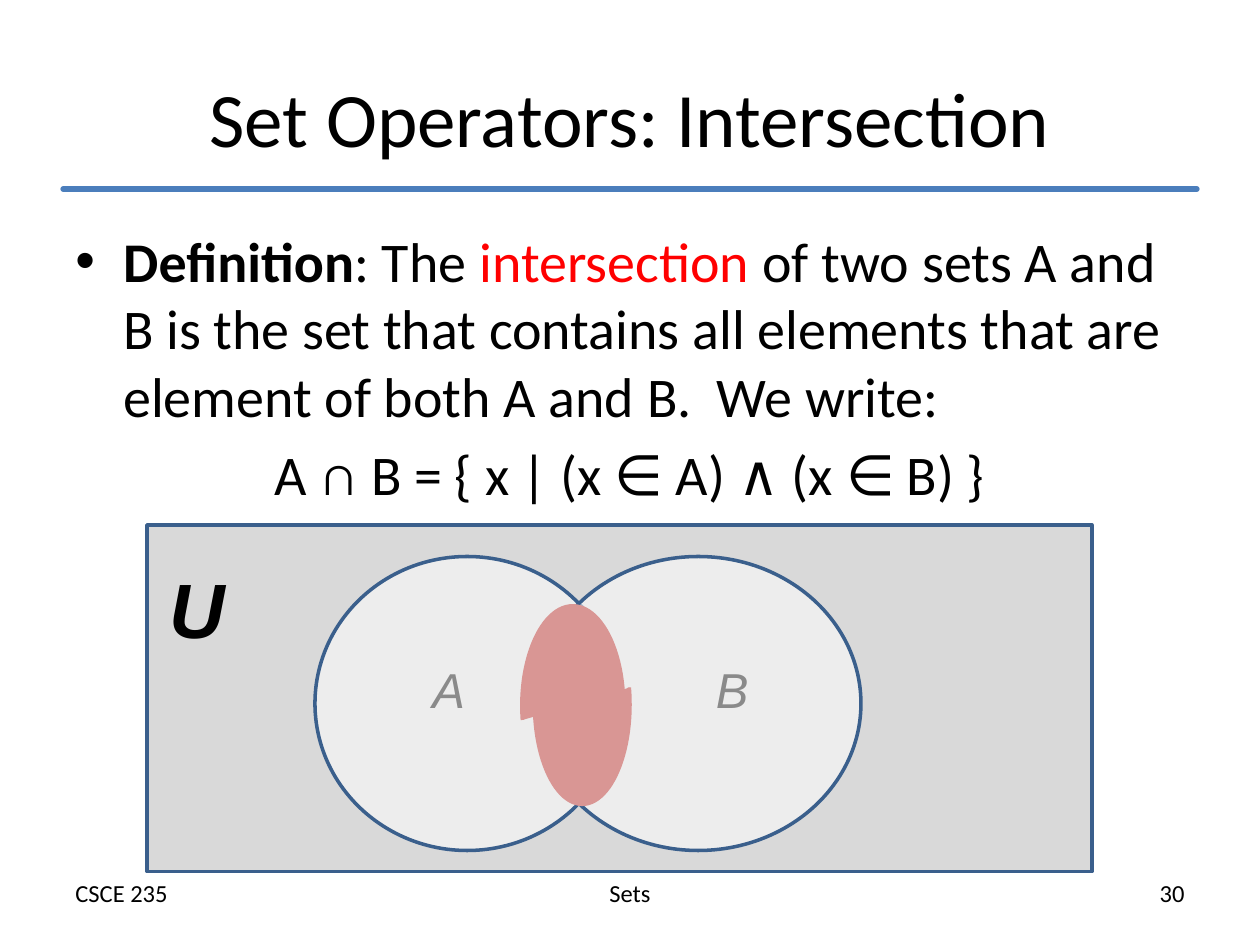
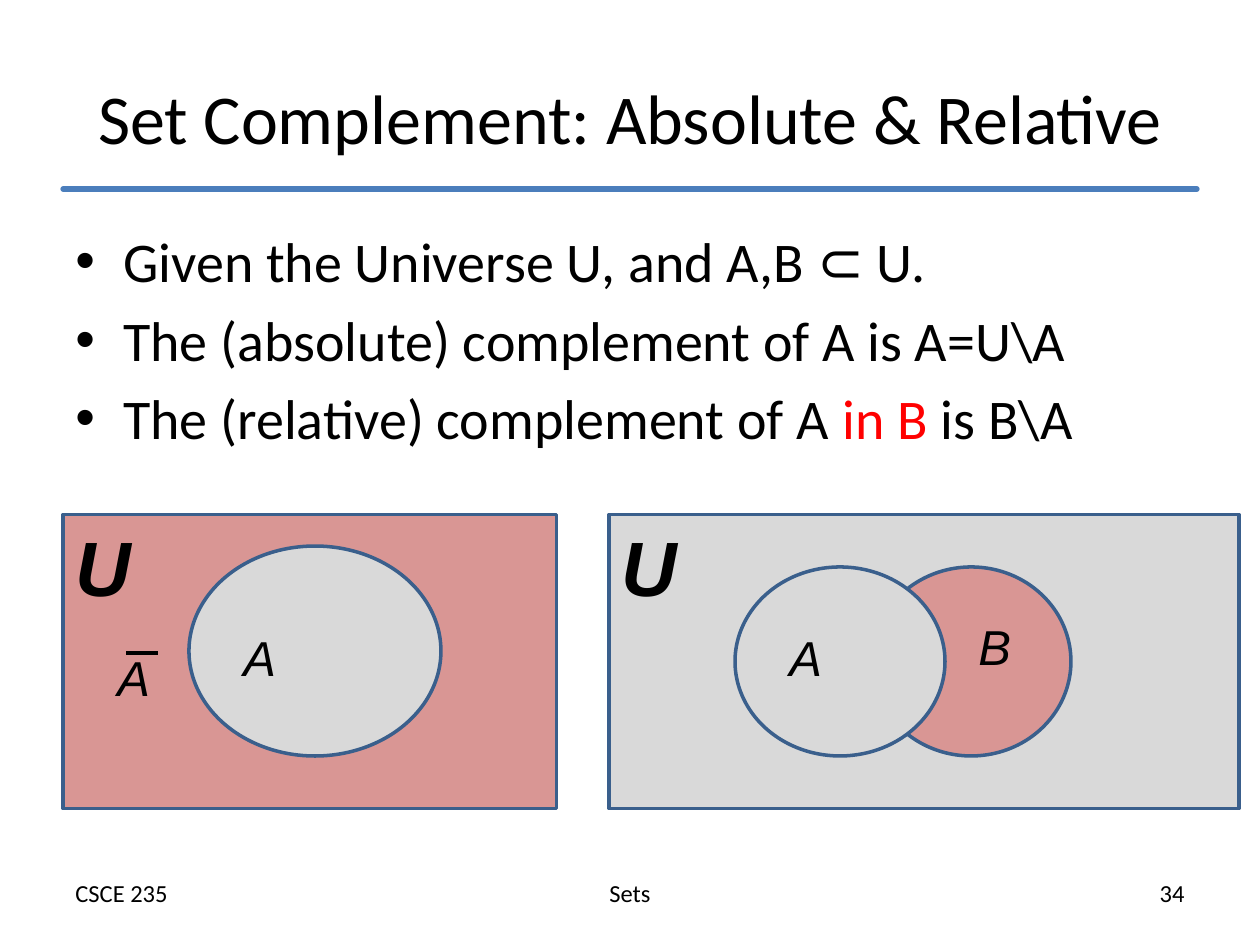
from dataclasses import dataclass
from typing import NamedTuple

from lxml import etree
from pptx import Presentation
from pptx import util as u
from pptx.dml.color import RGBColor
from pptx.enum import shapes, text
from pptx.oxml import ns

# Grid: 12 cells to the inch, so a slide is 120 columns by 90 rows
COLS, ROWS = 120, 90
CELL = u.Inches(1 / 12)
KIND = shapes.MSO_SHAPE
LEFT, MID, RIGHT = (text.PP_ALIGN.LEFT, text.PP_ALIGN.CENTER,
                    text.PP_ALIGN.RIGHT)


@dataclass(frozen=True)
class Theme:
    ink: str = "000000"
    paper: str = "FFFFFF"
    key: str = "FF0000"
    rule: str = "4B7EBC"
    edge: str = "3A5F8C"
    gray: str = "D9D9D9"
    rose: str = "D99694"
    font: str = "Calibri"
    math: str = "Arial"
    title: float = 44
    body: float = 32
    foot: float = 14
    world: float = 44
    label: float = 28
    hang: float = 0.38
    gap: float = 6.4


T = Theme()


class Box(NamedTuple):
    col: float
    row: float
    wide: float
    high: float


class Run(NamedTuple):
    words: str
    color: str = T.ink
    bold: bool = False


class Para(NamedTuple):
    runs: list[Run]
    align: text.PP_ALIGN = LEFT
    bullet: bool = True


class Area(NamedTuple):
    """A filled set, universe or part of a set."""
    box: Box
    fill: str
    kind: KIND = KIND.OVAL
    edge: str = T.edge
    alpha: int = 100
    turn: int = 0
    arc: tuple[float, ...] = ()


class Label(NamedTuple):
    col: float
    row: float
    name: str


class Bar(NamedTuple):
    col: float
    row: float
    end: float
    color: str
    width: float
    round: bool = False


class Page(NamedTuple):
    title: str
    size: float
    number: int
    body: list[Para]
    venn: list[Area | Label | Bar]


def cells(*spans: float) -> list[int]:
    return [round(span * CELL) for span in spans]


def sub(node, tag: str, **attrs: str):
    return etree.SubElement(node, ns.qn(tag), **attrs)


# Text
def write(slide, words: str | list[Para], box: Box, *, size: float,
          font: str = T.font, bold: bool = False, slant: bool = False,
          align: text.PP_ALIGN = LEFT, middle: bool = False,
          hang: float = 0, gap: float = 0) -> None:
    frame = slide.shapes.add_textbox(*cells(*box)).text_frame
    frame.word_wrap = True
    if middle:
        frame.vertical_anchor = text.MSO_ANCHOR.MIDDLE
    if isinstance(words, str):
        words = [Para([Run(words)], align, False)]
    for i, item in enumerate(words):
        para = frame.add_paragraph() if i else frame.paragraphs[0]
        para.alignment = item.align
        para.space_before = u.Pt(gap)
        props = para._p.get_or_add_pPr()
        if hang:
            props.set("marL", str(u.Inches(hang)))
            props.set("indent", str(-u.Inches(hang)))
        if item.bullet:
            sub(props, "a:buFont", typeface=T.math)
            sub(props, "a:buChar", char="•")
        for piece in item.runs:
            run = para.add_run()
            run.text = piece.words
            run.font.name, run.font.size = font, u.Pt(size)
            run.font.bold, run.font.italic = bold or piece.bold, slant
            run.font.color.rgb = RGBColor.from_string(piece.color)


# Diagram pieces
def fill_area(slide, area: Area) -> None:
    shape = slide.shapes.add_shape(area.kind, *cells(*area.box))
    shape.shadow.inherit = False
    shape.rotation = area.turn
    for i, angle in enumerate(area.arc):
        shape.adjustments[i] = angle * 0.6  # 60000 units to a degree
    shape.fill.solid()
    shape.fill.fore_color.rgb = RGBColor.from_string(area.fill)
    if area.alpha < 100:
        color = shape._element.spPr.find(".//" + ns.qn("a:srgbClr"))
        sub(color, "a:alpha", val=str(area.alpha * 1000))
    shape.line.color.rgb = RGBColor.from_string(area.edge)
    shape.line.width = u.Pt(2)


def draw_bar(slide, bar: Bar) -> None:
    line = slide.shapes.add_connector(
        shapes.MSO_CONNECTOR.STRAIGHT,
        *cells(bar.col, bar.row, bar.end, bar.row))
    line.line.color.rgb = RGBColor.from_string(bar.color)
    line.line.width = u.Pt(bar.width)
    props = line._element.spPr
    if bar.round:
        props.find(ns.qn("a:ln")).set("cap", "rnd")
    sub(props, "a:effectLst")


def name_set(slide, label: Label) -> None:
    world = label.name == "U"
    wide, high = (7, 10.1) if world else (5, 6.8)
    write(slide, label.name, Box(label.col, label.row, wide, high),
          size=T.world if world else T.label, font=T.math,
          bold=world, slant=True)


# Shared frame of a slide
def draw_page(deck, page: Page) -> None:
    slide = deck.slides.add_slide(deck.slide_layouts[6])
    feet = (("CSCE 235", LEFT), ("Sets", MID), (str(page.number), RIGHT))
    for i, (words, align) in enumerate(feet):
        write(slide, words, Box(6 + 36.5 * i, 83, 35, 4),
              size=T.foot, align=align)
    draw_bar(slide, Bar(6, 18, COLS - 6, T.rule, 3, True))
    write(slide, page.title, Box(6, 3.6, COLS - 12, 15),
          size=page.size, align=MID, middle=True)
    write(slide, page.body, Box(6, 21, COLS - 12, 59.4),
          size=T.body, hang=T.hang, gap=T.gap)
    draw = {Area: fill_area, Label: name_set, Bar: draw_bar}
    for piece in page.venn:
        draw[type(piece)](slide, piece)


PAGES = [
    Page("Set Operators: Intersection", T.title, 30, [
        Para([Run("Definition", bold=True), Run(": The "),
              Run("intersection ", T.key),
              Run("of two sets A and B is the set that contains all "
                  "elements that are element of both A and B.  We write:")]),
        Para([Run("A ∩ B = { x | (x ∈ A) ∧ (x ∈ B) }")], MID, False),
    ], [
        Area(Box(14, 50, 90, 33), T.gray, KIND.RECTANGLE),
        Label(15, 52.9, "U"),
        Label(40, 62.2, "A"),
        Label(67, 62.2, "B"),
        Area(Box(30, 53, 29, 28), T.paper, alpha=54),
        Area(Box(51, 53, 31, 28), T.paper, alpha=54),
        # Two arcs cover the shared part
        Area(Box(49.7, 57.7, 9.7, 19), T.rose, KIND.ARC, T.rose,
             arc=(163.99, 51.74)),
        Area(Box(50.9, 57.6, 9.1, 19), T.rose, KIND.ARC, T.rose,
             turn=180, arc=(160, 54.18)),
    ]),
    Page("Set Complement: Absolute & Relative", T.title - 4, 34, [
        Para([Run("Given the Universe U, and A,B ⊂ U.")]),
        Para([Run("The (absolute) complement of A is A=U\\A")]),
        Para([Run("The (relative) complement of A "), Run("in B", T.key),
              Run(" is B\\A")]),
    ], [
        # Absolute complement
        Area(Box(6, 49, 47, 28), T.rose, KIND.RECTANGLE),
        Label(6, 48.9, "U"),
        Area(Box(18, 52, 24, 20), T.gray),
        Label(22, 59.2, "A"),
        Label(10, 61.1, "A"),
        Bar(12, 62.2, 15, T.ink, 2.25),
        # Relative complement
        Area(Box(58, 49, 60, 28), T.gray, KIND.RECTANGLE),
        Label(58, 48.9, "U"),
        Area(Box(83, 54, 19, 18), T.rose),
        Label(92, 58.1, "B"),
        Area(Box(70, 54, 20, 18), T.gray),
        Label(74, 59.2, "A"),
    ]),
]


def main() -> None:
    deck = Presentation()
    deck.slide_width, deck.slide_height = cells(COLS, ROWS)
    for page in PAGES:
        draw_page(deck, page)
    deck.save("out.pptx")


if __name__ == "__main__":
    main()
